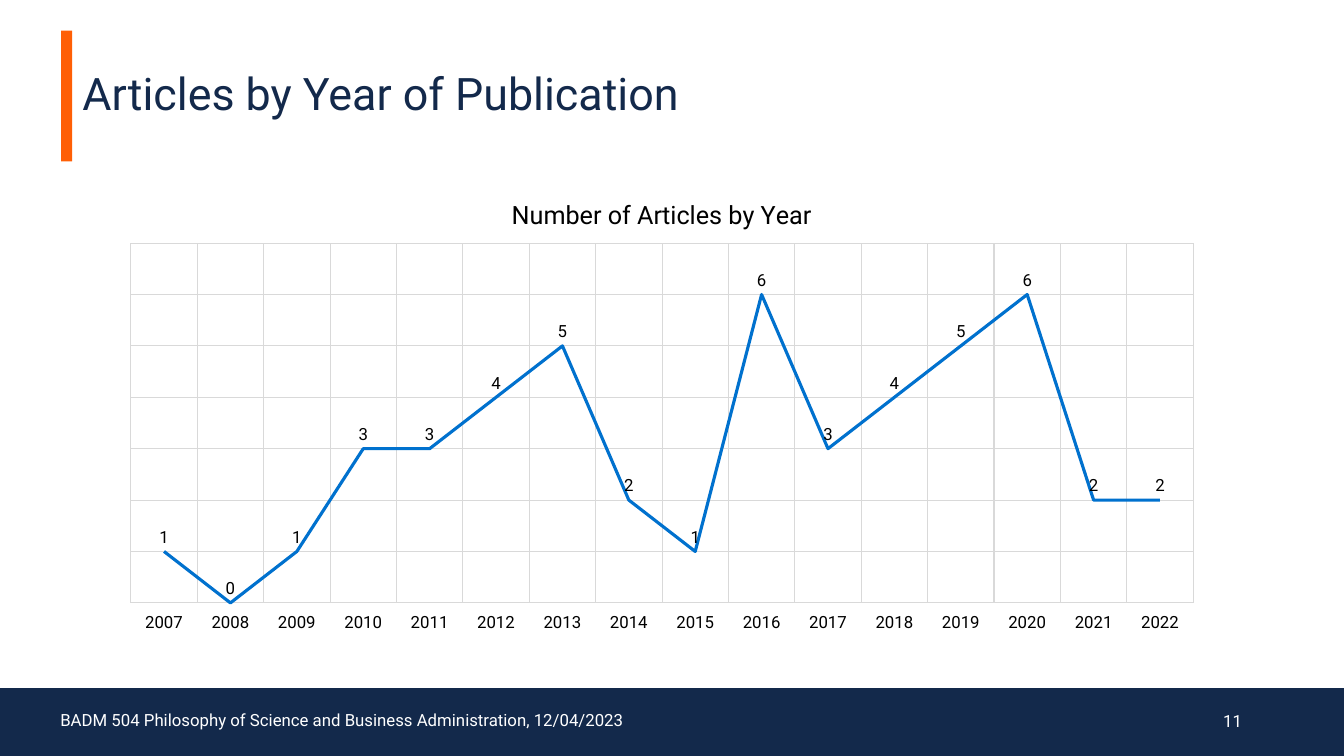
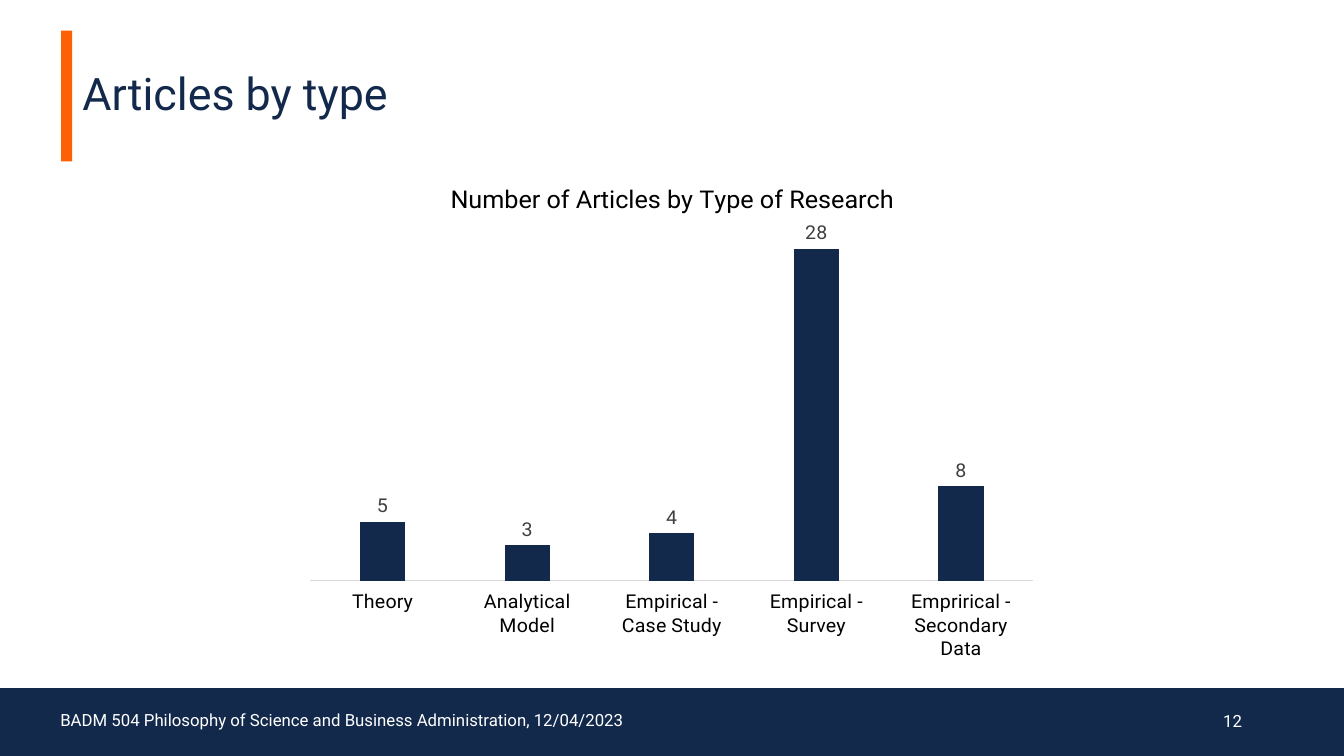
from dataclasses import dataclass
from typing import NamedTuple

from lxml import etree
from pptx import Presentation
from pptx.chart.data import CategoryChartData
from pptx.dml.color import RGBColor
from pptx.enum.chart import XL_CHART_TYPE as ChartType
from pptx.enum.chart import XL_LABEL_POSITION as LabelPos
from pptx.enum.chart import XL_TICK_LABEL_POSITION as TickLabels
from pptx.enum.chart import XL_TICK_MARK as Tick
from pptx.enum.shapes import MSO_SHAPE as Preset
from pptx.enum.text import MSO_ANCHOR as Anchor
from pptx.enum.text import PP_ALIGN as Align
from pptx.oxml.ns import qn
from pptx.util import Cm, Pt


@dataclass(frozen=True)
class Theme:
    font: str = "Roboto"
    navy: str = "13294B"
    orange: str = "FF5F05"
    blue: str = "0071CE"
    white: str = "FFFFFF"
    black: str = "000000"
    gray: str = "404040"
    grid: str = "D9D9D9"
    title: int = 32
    chart_title: int = 18
    bar_label: int = 14
    small: int = 12


class Box(NamedTuple):
    """Left, top, width and height in centimetres."""
    x: float
    y: float
    w: float
    h: float

    def emu(self):
        return [Cm(v) for v in self]


T = Theme()
SLIDE = Box(0, 0, 33.87, 19.05)
HEADER = Box(1.54, 0.77, 29.09, 3.3)
FOOTER = Box(0, 17.34, SLIDE.w, 1.71)
COURSE = "BADM 504 Philosophy of Science and Business Administration, 12/04/2023"


def rgb(color):
    return RGBColor.from_string(color)


def set_font(font, size, color):
    font.name = T.font
    font.size = Pt(size)
    font.bold = False
    font.color.rgb = rgb(color)


def add_text(s, box, text, size=T.small, color=T.white, align=Align.LEFT, spacing=1.0):
    tf = s.shapes.add_textbox(*box.emu()).text_frame
    tf.word_wrap = True
    tf.vertical_anchor = Anchor.MIDDLE
    p = tf.paragraphs[0]
    p.alignment = align
    p.line_spacing = spacing
    r = p.add_run()
    r.text = text
    set_font(r.font, size, color)


def add_block(s, box, color):
    sp = s.shapes.add_shape(Preset.RECTANGLE, *box.emu())
    sp.shadow.inherit = False
    sp.fill.solid()
    sp.fill.fore_color.rgb = rgb(color)
    sp.line.fill.background()


def add_header(s, box, title):
    add_block(s, Box(box.x, box.y, 0.28, box.h), T.orange)
    add_text(s, Box(box.x + 0.29, box.y + 0.07, box.w - 0.29, box.h), title,
             size=T.title, color=T.navy, spacing=0.7)


def add_footer(s, box, number):
    add_block(s, box, T.navy)
    y, h = box.y + 0.31, 1.02
    add_text(s, Box(box.x + 1.27, y, 22.66, h), COURSE, spacing=0.9)
    add_text(s, Box(box.x + 23.93, y, 7.62, h), str(number), align=Align.RIGHT)


def set_layout(parent, index, **values):
    """Place a chart part by fractions of the chart area."""
    for old in parent.findall(qn("c:layout")):
        parent.remove(old)
    layout = etree.Element(qn("c:layout"))
    manual = etree.SubElement(layout, qn("c:manualLayout"))
    for tag, value in values.items():
        etree.SubElement(manual, qn(f"c:{tag}")).set("val", str(value))
    parent.insert(index, layout)


def style_line(line, color, width):
    line.color.rgb = rgb(color)
    line.width = Pt(width)


def add_chart(s, box, kind, title, values, title_at, plot_at, top,
              axis_size=T.small, label_color=T.black, label_pos=LabelPos.ABOVE):
    """Add a one-series chart with a hidden value axis and return it."""
    data = CategoryChartData()
    data.categories = list(values)
    data.add_series("Series 1", list(values.values()))
    chart = s.shapes.add_chart(kind, *box.emu(), data).chart
    set_font(chart.font, 10, T.black)
    chart.has_legend = False

    tf = chart.chart_title.text_frame
    tf.text = title
    set_font(tf.paragraphs[0].runs[0].font, T.chart_title, T.black)
    chart.chart_title.include_in_layout = False
    area = chart._chartSpace.find(qn("c:chart"))
    x, y = title_at
    set_layout(area.find(qn("c:title")), 1, xMode="edge", yMode="edge", x=x, y=y)
    x, y, w, h = plot_at
    set_layout(area.find(qn("c:plotArea")), 0, layoutTarget="inner",
               xMode="edge", yMode="edge", x=x, y=y, w=w, h=h)

    axis = chart.category_axis
    axis.major_tick_mark = axis.minor_tick_mark = Tick.NONE
    axis.tick_label_position = TickLabels.LOW
    set_font(axis.tick_labels.font, axis_size, T.black)
    style_line(axis.format.line, T.grid, 0.75)
    chart.value_axis.visible = False
    chart.value_axis.has_major_gridlines = False
    chart.value_axis.minimum_scale = 0
    chart.value_axis.maximum_scale = top

    plot = chart.plots[0]
    plot.vary_by_categories = False
    plot.has_data_labels = True
    labels = plot.data_labels
    labels.show_value = True
    labels.position = label_pos
    set_font(labels.font, axis_size, label_color)
    return chart


def add_year_chart(s, box):
    counts = [1, 0, 1, 3, 3, 4, 5, 2, 1, 6, 3, 4, 5, 6, 2, 2]
    values = {str(year): n for year, n in enumerate(counts, 2007)}
    chart = add_chart(s, box, ChartType.LINE, "Number of Articles by Year", values,
                      title_at=(0.36, 0.04), plot_at=(0.02, 0.147, 0.96, 0.781), top=7)
    for axis in (chart.category_axis, chart.value_axis):
        axis.has_major_gridlines = True
        style_line(axis.major_gridlines.format.line, T.grid, 0.75)
    chart.value_axis.major_unit = 1
    series = chart.plots[0].series[0]
    series.smooth = False
    style_line(series.format.line, T.blue, 2.25)


def add_type_chart(s, box):
    values = {"Theory": 5, "Analytical Model": 3, "Empirical - Case Study": 4,
              "Empirical - Survey": 28, "Emprirical - Secondary Data": 8}
    chart = add_chart(s, box, ChartType.COLUMN_CLUSTERED,
                      "Number of Articles by Type of Research", values,
                      title_at=(0.2, 0.03), plot_at=(0.02, 0.126, 0.959, 0.736), top=30,
                      axis_size=T.bar_label, label_color=T.gray,
                      label_pos=LabelPos.OUTSIDE_END)
    plot = chart.plots[0]
    plot.gap_width = 219
    plot.overlap = -27
    fill = plot.series[0].format.fill
    fill.solid()
    fill.fore_color.rgb = rgb(T.navy)


def main():
    prs = Presentation()
    prs.slide_width, prs.slide_height = Cm(SLIDE.w), Cm(SLIDE.h)
    pages = [
        ("Articles by Year of Publication", add_year_chart, Box(2.74, 4.42, 27.89, 11.61)),
        ("Articles by type", add_type_chart, Box(7.44, 4.14, 19, 12.52)),
    ]
    for number, (title, draw_chart, box) in enumerate(pages, 11):
        s = prs.slides.add_slide(prs.slide_layouts[6])
        add_header(s, HEADER, title)
        add_footer(s, FOOTER, number)
        draw_chart(s, box)
    prs.save("out.pptx")


if __name__ == "__main__":
    main()
